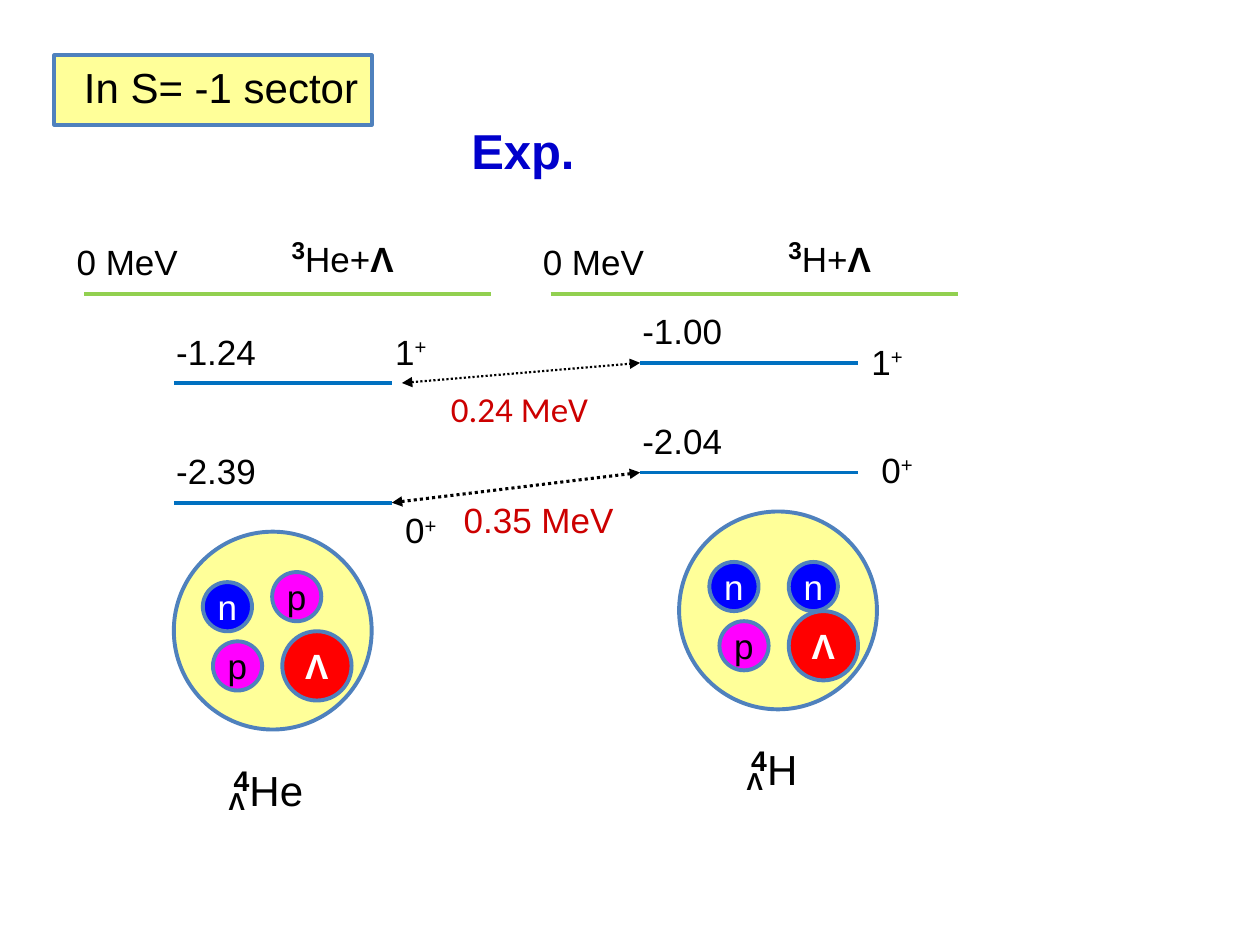
import pptx
import pptx.util
import pptx.dml.color
import pptx.enum.dml
import pptx.enum.shapes
import pptx.enum.text
import pptx.oxml.ns
import lxml.etree

Inches = pptx.util.Inches
Pt = pptx.util.Pt
Kind = pptx.enum.shapes.MSO_SHAPE

HEX = {
    "black": "000000", "white": "FFFFFF", "cream": "FFFF99", "edge": "4F81BD",
    "green": "92D050", "level": "0070C0", "red": "CC0000", "navy": "0000CC",
    "n": "0000FF", "p": "FF00FF", "Λ": "FF0000",
}
BOLD = {"bold": True}
HIGH = {"base": 30000}


def tint(name):
    return pptx.dml.color.RGBColor.from_string(HEX[name])


def write(shape, runs, size=20, color="black", font="Arial", center=True, wrap=False, grow=True):
    """Fill a shape with one line of (text, format) runs."""
    frame = shape.text_frame
    auto = pptx.enum.text.MSO_AUTO_SIZE
    anchor = pptx.enum.text.MSO_ANCHOR
    look = {
        "word_wrap": wrap,
        "auto_size": auto.SHAPE_TO_FIT_TEXT if grow else auto.NONE,
        "vertical_anchor": anchor.TOP if grow else anchor.MIDDLE,
    }
    for key, value in look.items():
        setattr(frame, key, value)
    para = frame.paragraphs[0]
    if center:
        para.alignment = pptx.enum.text.PP_ALIGN.CENTER
    for text, extra in runs:
        style = {"name": font, "size": size, "bold": False, **extra}
        base = style.pop("base", 0)
        style["size"] = Pt(style["size"])
        run = para.add_run()
        run.text = text
        for key, value in style.items():
            setattr(run.font, key, value)
        run.font.color.rgb = tint(color)
        if base:
            run._r.get_or_add_rPr().set("baseline", str(base))


def label(slide, x, y, w, h, runs, **look):
    box = slide.shapes.add_textbox(Inches(x), Inches(y), Inches(w), Inches(h))
    write(box, runs, **look)


def solid(slide, kind, x, y, w, h, fill):
    shape = slide.shapes.add_shape(kind, Inches(x), Inches(y), Inches(w), Inches(h))
    shape.shadow.inherit = False
    shape.fill.solid()
    shape.fill.fore_color.rgb = tint(fill)
    shape.line.color.rgb = tint("edge")
    shape.line.width = Pt(2.25)
    return shape


def line(slide, start, end, color, width=2.25, arrow=False):
    ends = [Inches(v) for v in (*start, *end)]
    rule = slide.shapes.add_connector(pptx.enum.shapes.MSO_CONNECTOR.STRAIGHT, *ends)
    rule.line.color.rgb = tint(color)
    rule.line.width = Pt(width)
    name = pptx.oxml.ns.qn
    if arrow:
        rule.line.dash_style = pptx.enum.dml.MSO_LINE.ROUND_DOT
        for tag in ("a:headEnd", "a:tailEnd"):
            lxml.etree.SubElement(rule.line._get_or_add_ln(), name(tag), type="triangle")
    lxml.etree.SubElement(rule._element.spPr, name("a:effectLst"))


def heading(slide):
    """Title over its cream panel."""
    solid(slide, Kind.RECTANGLE, 0.43, 0.44, 2.52, 0.55, "cream")
    title = slide.shapes.title
    place = {"left": 0.51, "top": 0.44, "width": 2.49, "height": 0.5}
    for key, value in place.items():
        setattr(title, key, Inches(value))
    write(title, [("In S= -1 sector", {})], size=24, wrap=True)
    title.element.getparent().append(title.element)  # bring in front of the panel


def scheme(slide, x, core, core_x, core_w, levels):
    """Threshold line with the bound levels below it."""
    line(slide, (x, 2.33), (x + 3.23, 2.33), "green")
    label(slide, x - 0.18, 1.86, 1.04, 0.43, [("0 MeV", {})])
    label(slide, core_x, 1.78, core_w, 0.43,
          [("3", {"size": 24, **BOLD, **HIGH}), (core + "+", {}), ("Λ", BOLD)])
    for y, energy, spin, spin_x, spin_y in levels:
        line(slide, (x + 0.71, y), (x + 2.44, y), "level")
        label(slide, x + 0.61, y - 0.47, 0.87, 0.43, [(energy, {})])
        label(slide, spin_x, spin_y, 0.46, 0.43, [(spin, {}), ("+", HIGH)])


def core(slide, x, y, parts, name, name_x, name_w):
    """Nucleus with its particles and its symbol below."""
    solid(slide, Kind.OVAL, x, y, 1.57, 1.57, "cream")
    for kind, dx, dy in parts:
        hyper = kind == "Λ"
        size = 0.55 if hyper else 0.39
        ball = solid(slide, Kind.OVAL, x + dx, y + dy, size, size, kind)
        write(ball, [(kind, {"bold": hyper})], grow=False,
              color="black" if kind == "p" else "white")
    label(slide, name_x, y + 1.74, name_w, 0.5,
          [("4", {"size": 28, **BOLD, **HIGH}), (name, {"size": 24})])
    label(slide, name_x - 0.06, y + 1.97, 0.4, 0.33, [("Λ", BOLD)], size=14)


def main():
    deck = pptx.Presentation()
    deck.slide_width, deck.slide_height = Inches(10), Inches(7.5)
    slide = deck.slides.add_slide(deck.slide_layouts[5])

    # Headings
    heading(slide)
    label(slide, 3.64, 0.91, 1.02, 0.57, [("Exp.", BOLD)], size=28, color="navy")

    # Level schemes
    scheme(slide, 0.67, "He", 2.16, 1.12,
           [(3.04, "-1.24", "1", 3.03, 2.57), (3.99, "-2.39", "0", 3.11, 3.99)])
    scheme(slide, 4.37, "H", 6.1, 0.97,
           [(2.88, "-1.00", "1", 6.81, 2.65), (3.75, "-2.04", "0", 6.89, 3.51)])

    # Level shifts
    line(slide, (3.19, 3.04), (5.08, 2.88), "black", 1.25, arrow=True)
    line(slide, (3.11, 3.99), (5.08, 3.75), "black", 1.75, arrow=True)
    label(slide, 3.48, 3.03, 1.39, 0.43, [("0.24 MeV", {})],
          color="red", font="Calibri", center=False)
    label(slide, 3.58, 3.91, 1.39, 0.43, [("0.35 MeV", {})], color="red")

    # Nuclei
    core(slide, 5.39, 4.06, [("n", 0.24, 0.4), ("n", 0.87, 0.4), ("p", 0.32, 0.87),
                             ("Λ", 0.87, 0.79)], "H", 5.85, 0.59)
    core(slide, 1.38, 4.22, [("n", 0.23, 0.4), ("p", 0.31, 0.87), ("Λ", 0.86, 0.79),
                             ("p", 0.78, 0.32)], "He", 1.74, 0.78)

    deck.save("out.pptx")


if __name__ == "__main__":
    main()
